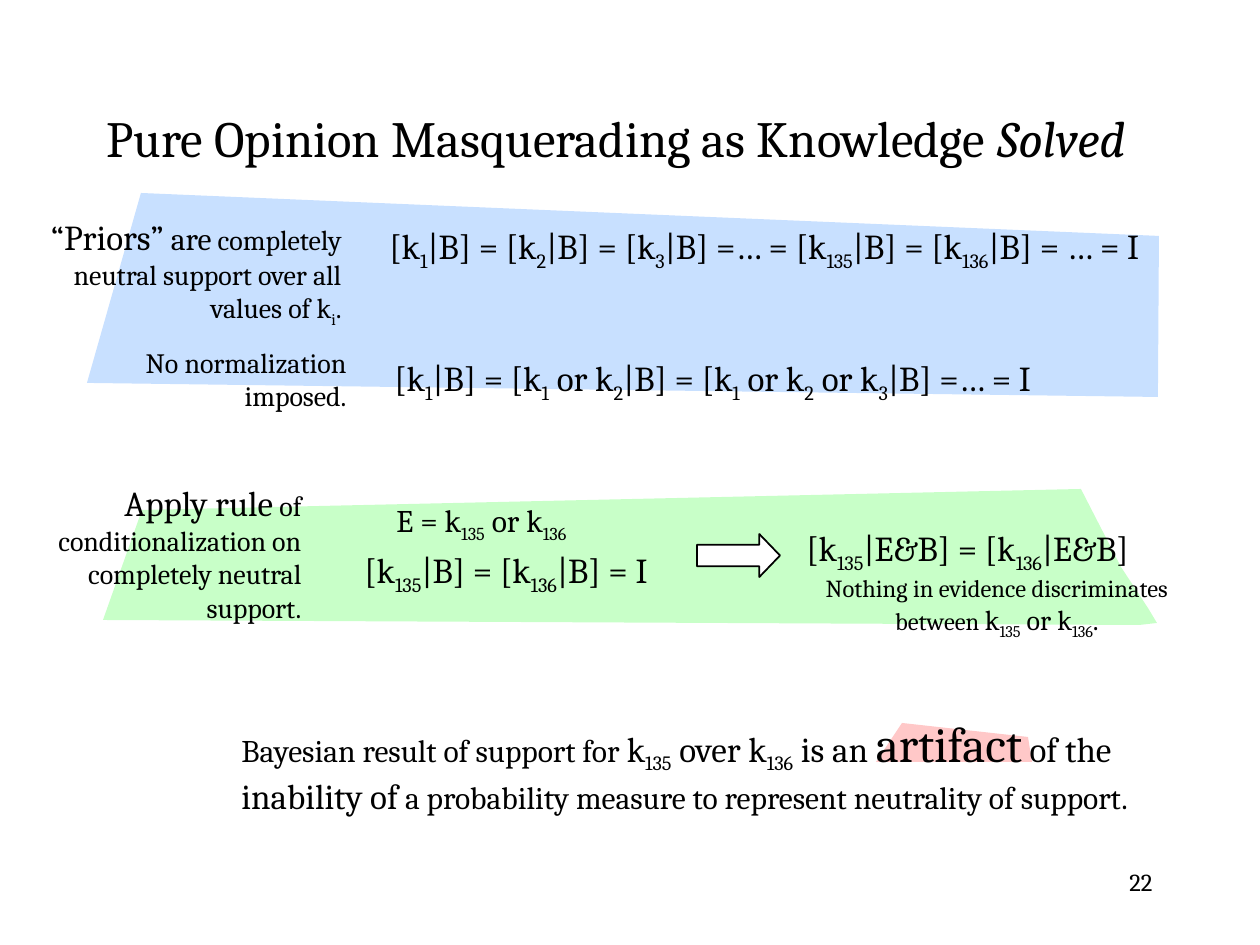
from pptx import Presentation
from pptx.dml.color import RGBColor
from pptx.enum.shapes import MSO_SHAPE
from pptx.enum.text import MSO_ANCHOR, MSO_AUTO_SIZE as FIT, PP_ALIGN as ALIGN
from pptx.util import Pt

PX = 914400 / 126  # EMU in one px
FONT = "Cambria"
BLACK = RGBColor(0x00, 0x00, 0x00)
WHITE = RGBColor(0xFF, 0xFF, 0xFF)
BLUE = RGBColor(0xC8, 0xE0, 0xFF)
GREEN = RGBColor(0xC8, 0xFF, 0xC8)
PINK = RGBColor(0xFF, 0xC8, 0xC8)


def emu(*lengths):
    return [round(length * PX) for length in lengths]


def add_runs(paragraph, parts):
    """Parts are (text, size) pairs; text between ~ marks is subscript."""
    for text, size in parts:
        for index, piece in enumerate(text.split("~")):
            if not piece:
                continue
            run = paragraph.add_run()
            run.text = piece
            run.font.name = FONT
            run.font.size = Pt(size)
            run.font.color.rgb = BLACK
            if index % 2:
                run._r.get_or_add_rPr().set("baseline", "-25000")


def add_text(slide, box, at, parts, align=ALIGN.LEFT, wrap=True):
    left, top, width, height = at
    label = slide.shapes.add_textbox(
        *emu(box[0] + left, box[1] + top, width, height))
    frame = label.text_frame
    frame.word_wrap = wrap
    frame.auto_size = FIT.SHAPE_TO_FIT_TEXT
    frame.paragraphs[0].alignment = align
    add_runs(frame.paragraphs[0], parts)


def add_formula(slide, box, at, text, size=20):
    add_text(slide, box, at, [(text, size)], wrap=False)


def add_patch(slide, box, points, color):
    corners = [(box[0] + x, box[1] + y) for x, y in points]
    builder = slide.shapes.build_freeform(*corners[0], scale=PX)
    builder.add_line_segments(corners[1:], close=True)
    patch = builder.convert_to_shape()
    patch.shadow.inherit = False
    patch.fill.solid()
    patch.fill.fore_color.rgb = color
    patch.line.fill.background()


def add_title(slide, box):
    title = slide.shapes.title
    title.left, title.top, title.width, title.height = emu(*box)
    frame = title.text_frame
    frame.word_wrap = True
    frame.auto_size = FIT.NONE
    frame.vertical_anchor = MSO_ANCHOR.MIDDLE
    heading = frame.paragraphs[0]
    heading.alignment = ALIGN.LEFT
    add_runs(heading, [("Pure Opinion Masquerading as Knowledge ", 29),
                       ("Solved", 29)])
    heading.runs[-1].font.italic = True


def add_priors(slide, box):
    add_patch(slide, box, [(113, 0), (1131, 43), (1130, 204), (59, 190)], BLUE)
    add_text(slide, box, (0, 16, 326, 122),
             [("“Priors”", 20), (" are", 18),
              (" completely neutral support over all values of k~i~.", 16)],
             ALIGN.RIGHT)
    add_formula(slide, box, (349, 25, 852, 54),
                "[k~1~|B] = [k~2~|B] = [k~3~|B] =… = "
                "[k~135~|B] = [k~136~|B] = … = I")
    add_text(slide, box, (19, 146, 312, 81),
             [("No normalization imposed.", 16)], ALIGN.RIGHT)
    add_formula(slide, box, (354, 157, 722, 54),
                "[k~1~|B] = [k~1~ or k~2~|B] = "
                "[k~1~ or k~2~ or k~3~|B] =… = I")


def add_conditionalization(slide, box):
    add_patch(slide, box,
              [(114, 35), (1053, 14), (1093, 92), (1120, 133),
               (1129, 148), (1111, 150), (75, 145)], GREEN)
    add_text(slide, box, (6, 0, 280, 156),
             [("Apply rule", 20),
              (" of conditionalization on completely neutral support.", 16)],
             ALIGN.RIGHT)
    # Premises
    add_formula(slide, box, (356, 20, 214, 50), "E = k~135~ or k~136~", 18)
    add_formula(slide, box, (324, 67, 323, 54), "[k~135~|B] = [k~136~|B] = I")
    # Inference arrow
    arrow = slide.shapes.add_shape(
        MSO_SHAPE.RIGHT_ARROW, *emu(box[0] + 669, box[1] + 59, 83, 43))
    arrow.adjustments[1] = 0.48
    arrow.shadow.inherit = False
    arrow.fill.solid()
    arrow.fill.fore_color.rgb = WHITE
    arrow.line.color.rgb = BLACK
    arrow.line.width = Pt(1)
    # Conclusion
    add_formula(slide, box, (766, 45, 370, 54), "[k~135~|E&B] = [k~136~|E&B]")
    add_text(slide, box, (775, 92, 388, 76),
             [("Nothing in evidence discriminates between ", 14),
              ("k~135~ or k~136~.", 16)], ALIGN.CENTER)


def add_verdict(slide, box):
    add_patch(slide, box, [(673, 16), (799, 30), (803, 55), (647, 55)], PINK)
    add_text(slide, box, (0, 0, 951, 113),
             [("Bayesian result of support for ", 18),
              ("k~135~ over k~136~ is an ", 20), ("artifact", 28),
              (" of the inability of", 20),
              (" a probability measure to represent neutrality of support.",
               18)])


def main():
    deck = Presentation()
    deck.slide_width, deck.slide_height = emu(1260, 945)
    slide = deck.slides.add_slide(deck.slide_layouts[5])
    add_title(slide, (94, 84, 1131, 106))
    add_priors(slide, (28, 193))
    add_conditionalization(slide, (28, 475))
    add_verdict(slide, (229, 707))
    # Page number
    add_text(slide, (903, 861), (0, 0, 262, 63), [("22", 14)], ALIGN.RIGHT)
    deck.save("out.pptx")


if __name__ == "__main__":
    main()
